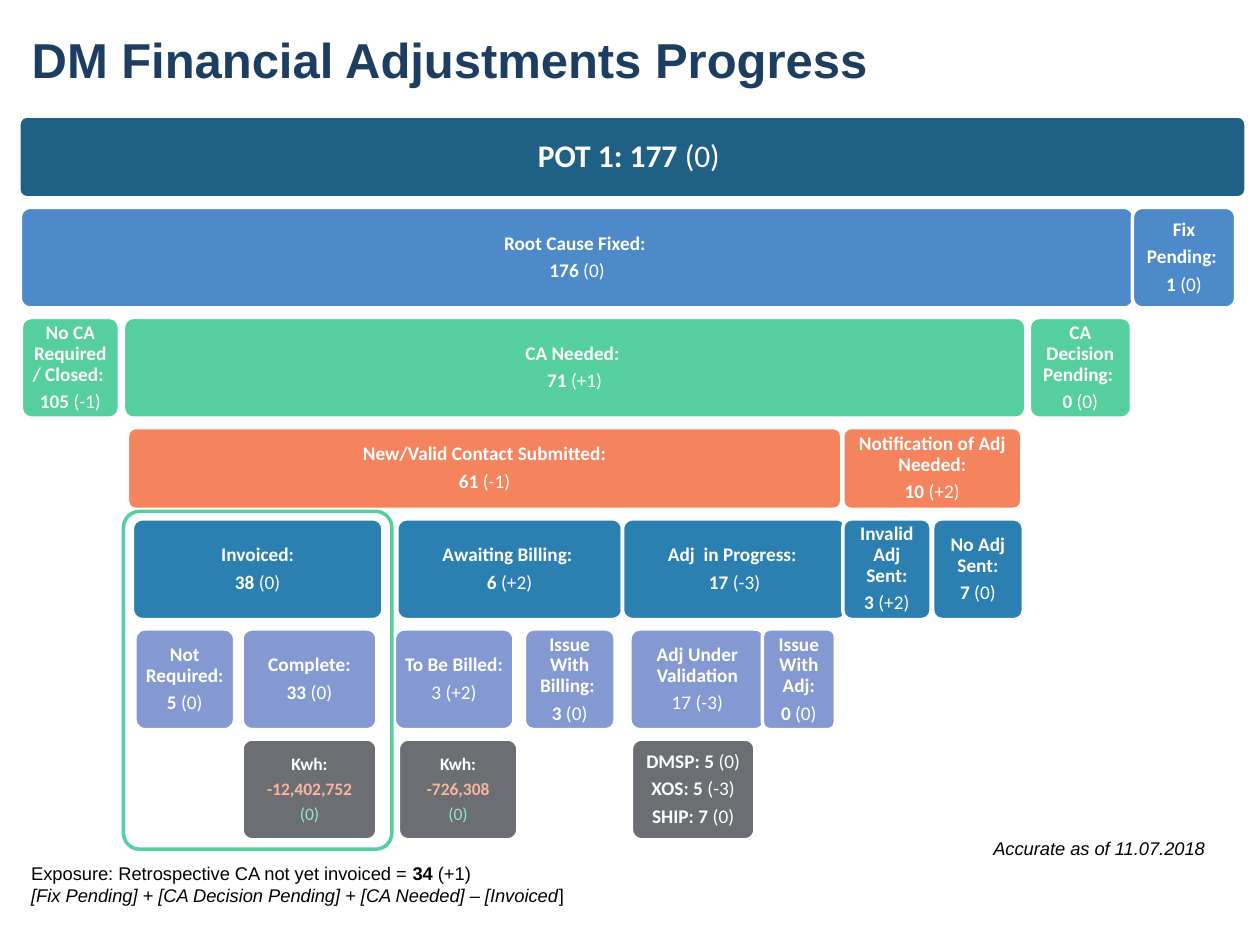
from pptx import Presentation, util as u
from pptx.dml.color import RGBColor
from pptx.enum import shapes, text

COLOURS = {
    "title": "1D3E61", "black": "000000", "white": "FFFFFF",
    "pot": "206085", "cause": "4E8ACA", "need": "56CF9E", "contact": "F5835D",
    "stage": "2B80B1", "detail": "8499D2", "energy": "6B6E72",
    "negative": "F9B59E", "change": "9AE2C5",
}


def rgb(key):
    return RGBColor.from_string(COLOURS[key])


def piece(words, colour=None, **fmt):
    return words, colour, fmt


def bold(words, colour=None):
    return piece(words, colour, bold=True)


def tally(label, count, change):
    """A bold label above a bold count and its plain change."""
    return [[bold(label)], [bold(count), piece(change)]]


def kwh(amount):
    return [[bold("Kwh:")], [bold(amount, "negative")], [piece("(0)", "change")]]


class Board:
    heading_font = "Arial"
    box_font = "Calibri"
    border = u.Pt(2)

    def __init__(self, slide):
        self.slide = slide

    def fill_text(self, frame, lines, size, font, colour, inset=None,
                  **paragraph_format):
        frame.word_wrap = True
        if inset is not None:
            for side in ("left", "right", "top", "bottom"):
                setattr(frame, f"margin_{side}", u.Cm(inset))
        for number, line in enumerate(lines):
            paragraph = frame.add_paragraph() if number else frame.paragraphs[0]
            for name, value in paragraph_format.items():
                setattr(paragraph, name, value)
            for words, own_colour, fmt in line:
                part = paragraph.add_run()
                part.text = words
                part.font.color.rgb = rgb(own_colour or colour)
                values = {"name": font, "size": u.Pt(size), "bold": False, **fmt}
                for name, value in values.items():
                    setattr(part.font, name, value)

    def label(self, place, lines, size, colour="black", inset=None,
              anchor=text.MSO_ANCHOR.TOP, **paragraph_format):
        frame = self.slide.shapes.add_textbox(*map(u.Cm, place)).text_frame
        frame.vertical_anchor = anchor
        self.fill_text(frame, lines, size, self.heading_font, colour, inset,
                       **paragraph_format)

    def rounded(self, place, corner, line, fill=None):
        shape = self.slide.shapes.add_shape(
            shapes.MSO_SHAPE.ROUNDED_RECTANGLE, *map(u.Cm, place))
        shape.shadow.inherit = False
        shape.adjustments[0] = corner
        if fill:
            shape.fill.solid()
            shape.fill.fore_color.rgb = rgb(fill)
        else:
            shape.fill.background()
        shape.line.color.rgb = rgb(line)
        shape.line.width = self.border
        return shape

    def box(self, place, fill, lines, size=11, inset=0.12):
        frame = self.rounded(place, 0.1, "white", fill).text_frame
        frame.vertical_anchor = text.MSO_ANCHOR.MIDDLE
        self.fill_text(frame, lines, size, self.box_font, "white", inset,
                       alignment=text.PP_ALIGN.CENTER, line_spacing=0.9,
                       space_after=u.Pt(size * 0.35))


LOW, TALL = 1.65, 2.03
FIRST_TOP, ROW_GAP = 2.34, 0.19

# Each level: colour, height, boxes as (left, width, lines, optional size and inset)
LEVELS = [
    ("pot", LOW, [
        (0.38, 24.74, [[bold("POT 1: 177 "), piece("(0) ")]], 18, 0.18),
    ]),
    ("cause", TALL, [
        (0.41, 22.45, tally("Root Cause Fixed: ", "176 ", "(0)")),
        (22.83, 2.08, [[bold("Fix")]] + tally("Pending: ", "1 ", "(0)")),
    ]),
    ("need", TALL, [
        (0.43, 1.98, tally("No CA Required/ Closed: ", "105 ", "(-1)")),
        (2.49, 18.19, tally("CA Needed: ", "71 ", "(+1)")),
        (20.75, 2.06, tally("CA Decision Pending: ", "0 ", "(0)")),
    ]),
    ("contact", LOW, [
        (2.57, 14.4, tally("New/Valid Contact Submitted:", "61 ", "(-1)")),
        (16.99, 3.61, tally("Notification of Adj Needed:", "10 ", "(+2)")),
    ]),
    ("stage", TALL, [
        (2.67, 5.05, tally("Invoiced:", "38 ", "(0)")),
        (8, 4.55, tally("Awaiting Billing: ", "6 ", "(+2)")),
        (12.55, 4.52, tally("Adj  in Progress: ", "17 ", "(-3)")),
        (16.99, 1.78, tally("Invalid Adj Sent:", "3 ", "(+2)")),
        (18.8, 1.83, tally("No Adj Sent:", "7", " (0)")),
    ]),
    ("detail", TALL, [
        (2.72, 2.01, tally("Not Required: ", "5 ", "(0)")),
        (4.88, 2.72, tally("Complete:", "33 ", "(0)")),
        (7.95, 2.41, [[bold("To Be Billed:")], [piece("3 (+2)")]]),
        (10.57, 1.83, tally("Issue With Billing: ", "3 ", "(0)")),
        (12.7, 2.72, [[bold("Adj Under Validation")], [piece("17 (-3)")]]),
        (15.37, 1.47, tally("Issue With Adj:", "0 ", "(0)")),
    ]),
    ("energy", TALL, [
        (4.88, 2.72, kwh("-12,402,752"), 10, 0.1),
        (8.03, 2.41, kwh("-726,308"), 10, 0.1),
        (12.73, 2.49, [
            [bold("DMSP: 5 "), piece("(0)")],
            [bold("XOS: 5 "), piece("(-3)")],
            [bold("SHIP: 7 "), piece("(0)")],
        ]),
    ]),
]


def main():
    deck = Presentation()
    deck.slide_width, deck.slide_height = u.Cm(25.4), u.Cm(19.05)
    board = Board(deck.slides.add_slide(deck.slide_layouts[6]))

    # Title
    board.label((0.64, -0.15, 24.13, 2.69),
                [[bold("DM Financial Adjustments Progress")]], 28, "title",
                inset=0, anchor=text.MSO_ANCHOR.MIDDLE)

    # Breakdown, one level per row
    top = FIRST_TOP
    for fill, height, boxes in LEVELS:
        for left, width, *content in boxes:
            board.box((left, top, width, height), fill, *content)
        top += height + ROW_GAP

    # Exposure note
    board.label((0.38, 17.25, 16.69, 1.19), [
        [piece("Exposure: Retrospective CA not yet invoiced = "),
         bold("34 "), piece("(+1)")],
        [piece("[Fix Pending] + [CA Decision Pending] + [CA Needed] – [Invoiced",
               italic=True), piece("]")],
    ], 10.5)

    # Outline around the invoiced branch
    board.rounded((2.49, 10.31, 5.41, 6.81), 0.06, "need")

    # Date of the figures
    board.label((19.58, 16.76, 5.16, 0.71),
                [[piece("Accurate as of 11.07.2018", italic=True)]], 10.5,
                alignment=text.PP_ALIGN.CENTER)

    deck.save("out.pptx")


if __name__ == "__main__":
    main()
